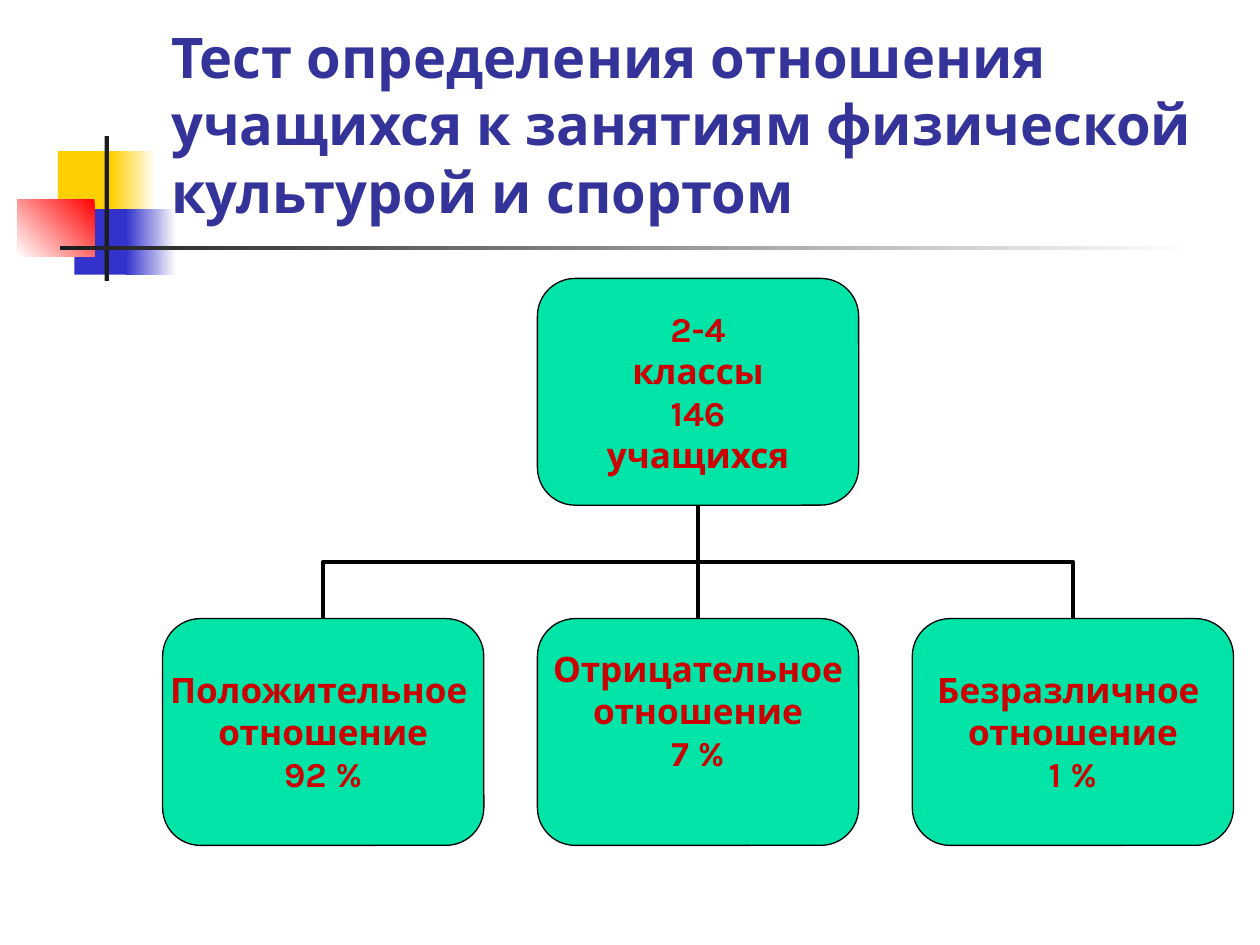
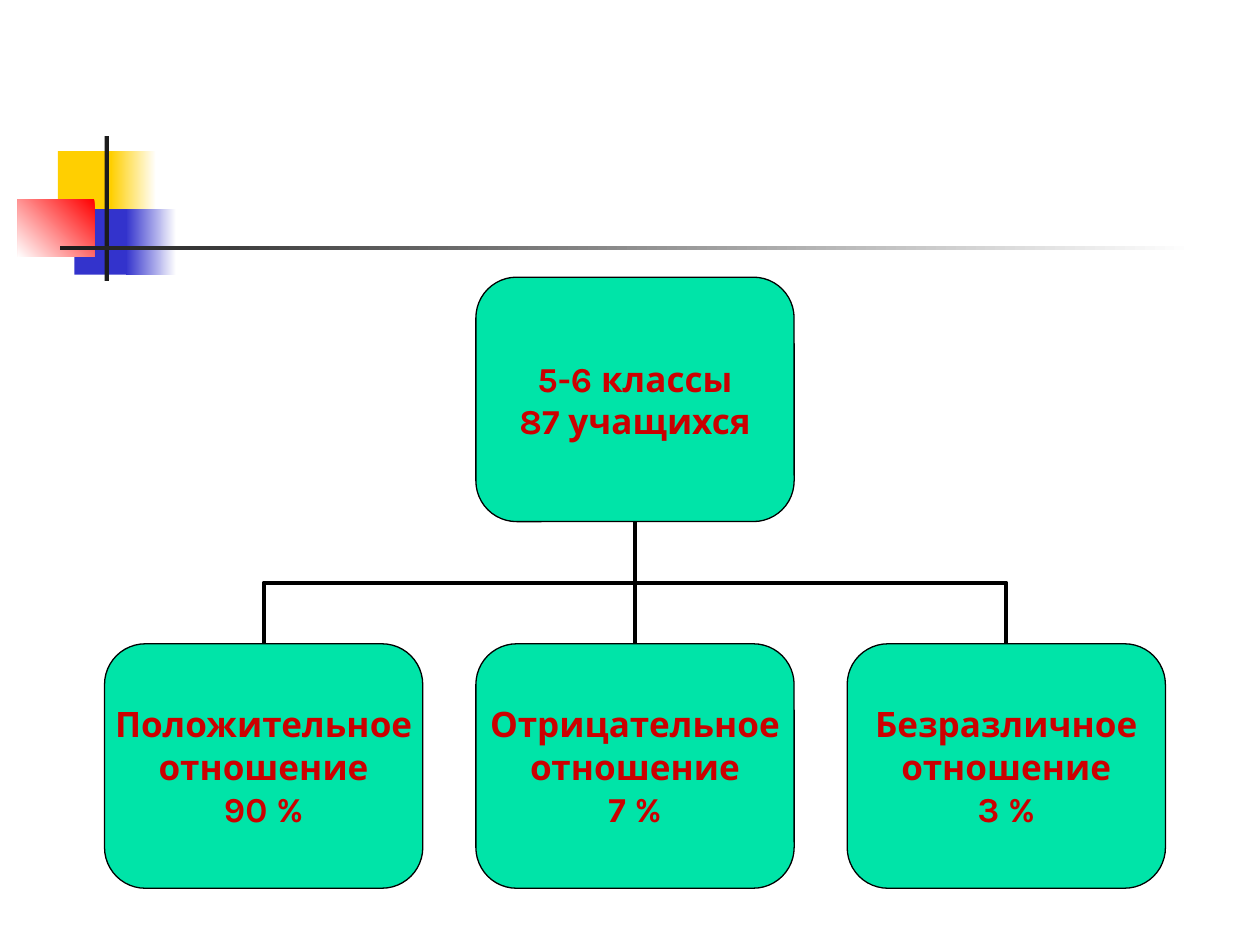
from dataclasses import dataclass

from lxml.etree import SubElement
from pptx import Presentation
from pptx.dml.color import RGBColor
from pptx.enum.shapes import MSO_CONNECTOR, MSO_SHAPE
from pptx.enum.text import MSO_ANCHOR, PP_ALIGN
from pptx.oxml.ns import qn
from pptx.util import Inches, Pt


@dataclass(frozen=True)
class Theme:
    font: str = "Karla"
    title: str = "333399"
    label: str = "CC0000"
    card: str = "00E4A8"
    line: str = "000000"
    white: str = "FFFFFF"
    yellow: str = "FFCF01"
    blue: str = "3333CC"
    red: str = "FF0000"
    dark: str = "1C1C1C"
    title_size: int = 32
    label_size: int = 20
    outline: float = 0.75
    link: float = 2.25


@dataclass(frozen=True)
class Box:
    x: float
    y: float
    w: float
    h: float

    def cell(self, x, y, w, h, cols=1, rows=1):
        return Box(self.x + self.w * x / cols, self.y + self.h * y / rows,
                   self.w * w / cols, self.h * h / rows)

    @property
    def center(self):
        return self.x + self.w / 2

    @property
    def bottom(self):
        return self.y + self.h

    def lengths(self):
        return [Inches(v) for v in (self.x, self.y, self.w, self.h)]


THEME = Theme()
TITLE_BOX = Box(1.26, 0.23, 8.52, 1.6)
EMBLEM_BOX = Box(0.14, 1.08, 9.34, 1.15)
EMBLEM_GRID = (934, 115)
CARD_W, CARD_H, CARD_STEP = 0.3, 0.4, 0.35
EMPTY_LINE = 0.34


def rgb(color):
    return RGBColor.from_string(color)


def write(tf, text, size, color, align=PP_ALIGN.LEFT, anchor=MSO_ANCHOR.MIDDLE,
          wrap=True, bold=True):
    tf.word_wrap = wrap
    tf.vertical_anchor = anchor
    for i, line in enumerate(text.split("\n")):
        p = tf.add_paragraph() if i else tf.paragraphs[0]
        p.alignment = align
        r = p.add_run()
        r.text = line
        r.font.name = THEME.font
        r.font.size = Pt(size)
        r.font.bold = bold
        r.font.color.rgb = rgb(color)


def add_block(s, box, colors, angle=180, kind=MSO_SHAPE.RECTANGLE, outline=None):
    sp = s.shapes.add_shape(kind, *box.lengths())
    sp.shadow.inherit = False
    if len(colors) == 1:
        sp.fill.solid()
        sp.fill.fore_color.rgb = rgb(colors[0])
    else:
        sp.fill.gradient()
        sp.fill.gradient_angle = angle
        for stop, color in zip(sp.fill.gradient_stops, colors):
            stop.color.rgb = rgb(color)
    if outline:
        sp.line.color.rgb = rgb(outline)
        sp.line.width = Pt(THEME.outline)
    else:
        sp.line.fill.background()
    return sp


def add_emblem(s, box):
    t = THEME
    for cells, colors, angle in (
        ((32, 12, 48, 52), [t.yellow], 0),
        ((74, 12, 36, 52), [t.white, t.yellow], 180),
        ((45, 58, 46, 52), [t.blue], 0),
        ((86, 58, 40, 52), [t.white, t.blue], 180),
        ((0, 50, 61, 46), [t.red, t.white], 225),
        ((69, 0, 3.5, 115), [t.dark], 0),
        ((34, 87, 900, 3.5), [t.white, t.dark], 180),
    ):
        add_block(s, box.cell(*cells, *EMBLEM_GRID), colors, angle)


def add_title(s, box, text):
    tb = s.shapes.add_textbox(*box.lengths())
    write(tb.text_frame, text, THEME.title_size, THEME.title, anchor=MSO_ANCHOR.BOTTOM)


def add_link(s, child, parent):
    mid_x, mid_y = (child.center + parent.center) / 2, (child.y + parent.bottom) / 2
    half_rise = (child.y - parent.bottom) / 2
    half_run = (child.center - parent.center) / 2
    c = s.shapes.add_connector(
        MSO_CONNECTOR.ELBOW,
        Inches(mid_x - half_rise), Inches(mid_y + half_run),
        Inches(mid_x + half_rise), Inches(mid_y - half_run))
    c.line.color.rgb = rgb(THEME.line)
    c.line.width = Pt(THEME.link)
    spPr = c._element.spPr
    spPr.find(qn("a:xfrm")).set("rot", str(270 * 60000))
    SubElement(spPr, qn("a:effectLst"))


def add_card(s, box, text, lift=0):
    sp = add_block(s, box, [THEME.card], kind=MSO_SHAPE.ROUNDED_RECTANGLE,
                   outline=THEME.line)
    tf = sp.text_frame
    tf.margin_left = tf.margin_right = tf.margin_top = 0
    tf.margin_bottom = Inches(lift)
    write(tf, text, THEME.label_size, THEME.label, align=PP_ALIGN.CENTER, wrap=False)


def add_tree(s, box, root, answers, lifts=(0, 0, 0)):
    parent = box.cell(CARD_STEP, 0, CARD_W, CARD_H)
    children = [box.cell(i * CARD_STEP, 1 - CARD_H, CARD_W, CARD_H)
                for i in range(len(answers))]
    for child in reversed(children):
        add_link(s, child, parent)
    add_card(s, parent, root)
    for child, text, lift in zip(children, answers, lifts):
        add_card(s, child, text, lift)


def add_survey_slide(prs, box, root, answers, title=None, lifts=(0, 0, 0)):
    s = prs.slides.add_slide(prs.slide_layouts[6])
    add_emblem(s, EMBLEM_BOX)
    if title:
        add_title(s, TITLE_BOX, title)
    add_tree(s, box, root, answers, lifts)


def main():
    prs = Presentation()
    prs.slide_width, prs.slide_height = Inches(10), Inches(7.5)
    add_survey_slide(
        prs, Box(1.29, 2.21, 8.5, 4.5), "2-4\nклассы\n146\nучащихся",
        ["Положительное \nотношение\n92 %",
         "Отрицательное\nотношение\n7 %",
         "Безразличное \nотношение\n1 %"],
        title="Тест определения отношения учащихся к занятиям физической культурой и спортом",
        lifts=(0, EMPTY_LINE, 0))
    add_survey_slide(
        prs, Box(0.83, 2.2, 8.42, 4.85), "5-6 классы\n87 учащихся",
        ["Положительное\nотношение\n90 %",
         "Отрицательное\nотношение\n7 %",
         "Безразличное\nотношение\n3 %"])
    prs.save("out.pptx")


if __name__ == "__main__":
    main()
